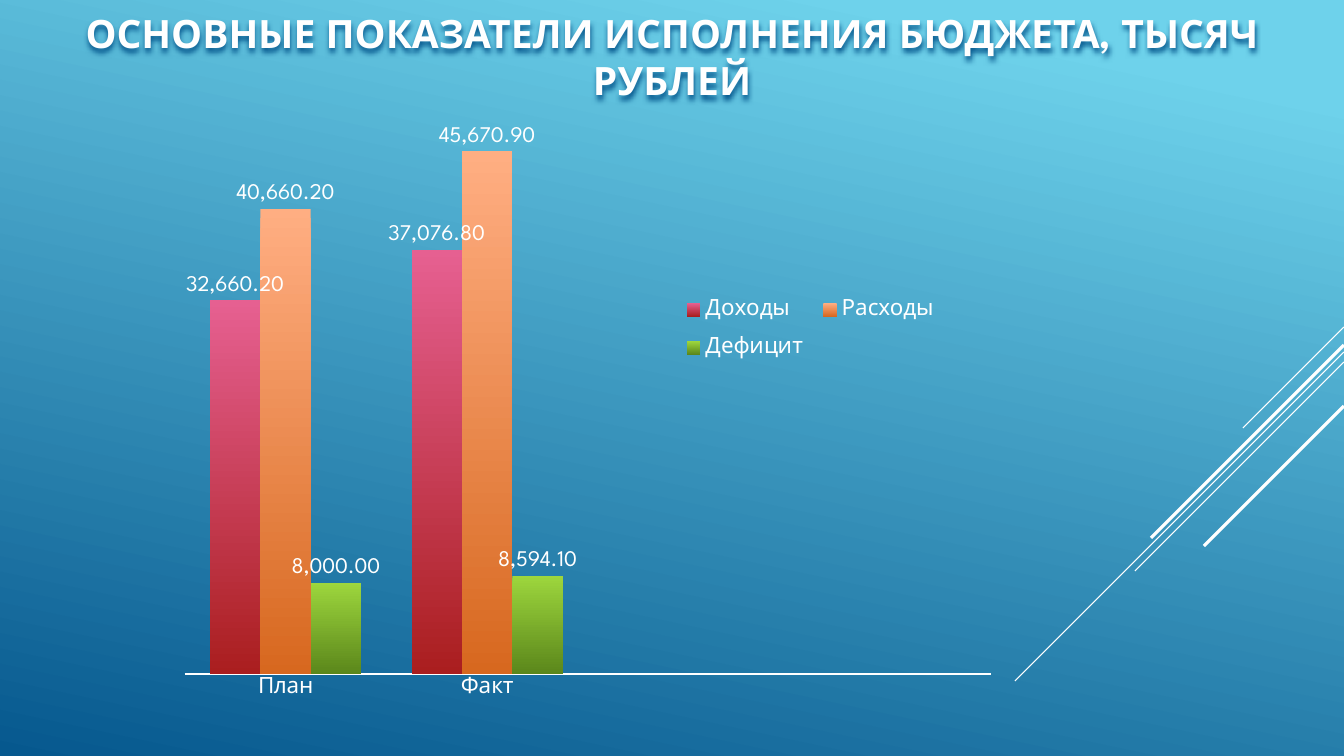
import pptx
import pptx.chart.data
import pptx.dml.color
import pptx.enum.chart
import pptx.enum.shapes
import pptx.enum.text
import pptx.oxml
import pptx.oxml.ns
import pptx.util
from lxml import etree

TITLE = "ОСНОВНЫЕ ПОКАЗАТЕЛИ ИСПОЛНЕНИЯ БЮДЖЕТА, ТЫСЯЧ РУБЛЕЙ"
FONT = "League Spartan"
NUMBER_FORMAT = "#,##0.00"
RGB = pptx.dml.color.RGBColor
WHITE = RGB(0xFF, 0xFF, 0xFF)
SKY, DEEP_BLUE = RGB(0x6E, 0xD2, 0xEB), RGB(0x06, 0x58, 0x8E)
PINK, RED = RGB(0xE6, 0x60, 0x91), RGB(0xAA, 0x1E, 0x1F)
PEACH, ORANGE = RGB(0xFF, 0xAE, 0x82), RGB(0xD7, 0x68, 0x1F)
LIME, GREEN = RGB(0x9D, 0xD6, 0x3D), RGB(0x5B, 0x87, 0x1B)

CATEGORIES = ["План", "Факт", "", ""]
SERIES = [
    ("Доходы", (32660.2, 37076.8, None, None), PINK, RED),
    ("Расходы", (40660.2, 45670.9, None, None), PEACH, ORANGE),
    ("Дефицит", (8000, 8594.1, None, None), LIME, GREEN),
]
SLIDE_SIZE = (1344, 756)
TITLE_BOX = (0, 10, 1344, 92)
CHART_BOX = (85, 102, 907, 622)
PLOT_LAYOUT = (0.11, 0, 0.89, 0.92)
LEGEND_LAYOUT = (0.65, 0.29, 0.3, 0.15)
DIAGONALS = [
    (327, 101, 0.75),
    (352, 329, 0.75),
    (362, 209, 0.75),
    (345, 193, 2.25),
    (406, 140, 2.25),
]


def px(value):
    return pptx.util.Emu(round(value * 914400 / 100.8))


def set_gradient(fill, start, end, clockwise, first_position=0):
    fill.gradient()
    fill.gradient_angle = 360 - clockwise
    for stop, color, position in zip(fill.gradient_stops, (start, end), (first_position, 1)):
        stop.color.rgb = color
        stop.position = position


def set_font(font, size):
    font.name = FONT
    font.size = pptx.util.Pt(size)
    font.color.rgb = WHITE


def make_layout(fractions, inner=False):
    layout = pptx.oxml.parse_xml(f"<c:layout {pptx.oxml.ns.nsdecls('c')}><c:manualLayout/></c:layout>")
    settings = [("layoutTarget", "inner")] if inner else []
    settings += [("xMode", "edge"), ("yMode", "edge")]
    settings += zip("xywh", fractions)
    for tag, value in settings:
        etree.SubElement(layout[0], pptx.oxml.ns.qn(f"c:{tag}")).set("val", str(value))
    return layout


def replace_layout(parent, layout, position):
    for old in parent.findall(pptx.oxml.ns.qn("c:layout")):
        parent.remove(old)
    parent.insert(position, layout)


def add_diagonals(slide):
    right = SLIDE_SIZE[0]
    for top, run, width in DIAGONALS:
        line = slide.shapes.add_connector(
            pptx.enum.shapes.MSO_CONNECTOR.STRAIGHT,
            px(right), px(top), px(right - run), px(top + run))
        line.line.color.rgb = WHITE
        line.line.width = pptx.util.Pt(width)
        etree.SubElement(line._element.spPr, pptx.oxml.ns.qn("a:effectLst"))


def add_title(slide):
    box = slide.shapes.add_textbox(*map(px, TITLE_BOX))
    frame = box.text_frame
    frame.word_wrap = True
    frame.vertical_anchor = pptx.enum.text.MSO_ANCHOR.MIDDLE
    frame.text = TITLE
    paragraph = frame.paragraphs[0]
    paragraph.alignment = pptx.enum.text.PP_ALIGN.CENTER
    set_font(paragraph.runs[0].font, 27.9)
    paragraph.runs[0].font.bold = True
    box._element.spPr.append(pptx.oxml.parse_xml(
        f'<a:effectLst {pptx.oxml.ns.nsdecls("a")}>'
        '<a:outerShdw blurRad="50800" dist="38100" dir="5400000" algn="t" rotWithShape="0">'
        f'<a:srgbClr val="{DEEP_BLUE}"/></a:outerShdw></a:effectLst>'))


def add_budget_chart(slide):
    data = pptx.chart.data.CategoryChartData(number_format=NUMBER_FORMAT)
    data.categories = CATEGORIES
    for name, values, start, end in SERIES:
        data.add_series(name, values)
    chart = slide.shapes.add_chart(
        pptx.enum.chart.XL_CHART_TYPE.COLUMN_CLUSTERED, *map(px, CHART_BOX), data).chart
    chart.has_title = False
    set_font(chart.font, 10)

    plot = chart.plots[0]
    plot.gap_width = 100
    plot.overlap = 0
    plot.vary_by_categories = False
    for series, (name, values, start, end) in zip(plot.series, SERIES):
        set_gradient(series.format.fill, start, end, 90)
        labels = series.data_labels
        labels.show_value = True
        labels.number_format = NUMBER_FORMAT
        labels.number_format_is_linked = False
        labels.position = pptx.enum.chart.XL_LABEL_POSITION.OUTSIDE_END
        set_font(labels.font, 16)

    categories = chart.category_axis
    categories.major_tick_mark = pptx.enum.chart.XL_TICK_MARK.NONE
    categories.format.line.color.rgb = WHITE
    categories.format.line.width = pptx.util.Pt(1)
    set_font(categories.tick_labels.font, 16)

    values = chart.value_axis
    values.minimum_scale = 0
    values.maximum_scale = 50000
    values.has_major_gridlines = False
    values.tick_labels.number_format = NUMBER_FORMAT
    values.tick_labels.number_format_is_linked = False
    values.visible = False

    chart.has_legend = True
    legend = chart.legend
    legend.position = pptx.enum.chart.XL_LEGEND_POSITION.BOTTOM
    legend.include_in_layout = False
    set_font(legend.font, 16)
    replace_layout(legend._element, make_layout(LEGEND_LAYOUT), 1)
    plot_area = chart._chartSpace.chart.plotArea
    replace_layout(plot_area, make_layout(PLOT_LAYOUT, inner=True), 0)


def main():
    presentation = pptx.Presentation()
    presentation.slide_width, presentation.slide_height = map(px, SLIDE_SIZE)
    slide = presentation.slides.add_slide(presentation.slide_layouts[6])
    set_gradient(slide.background.fill, SKY, DEEP_BLUE, 102, 0.1)
    add_diagonals(slide)
    add_title(slide)
    add_budget_chart(slide)
    presentation.save("out.pptx")


if __name__ == "__main__":
    main()
